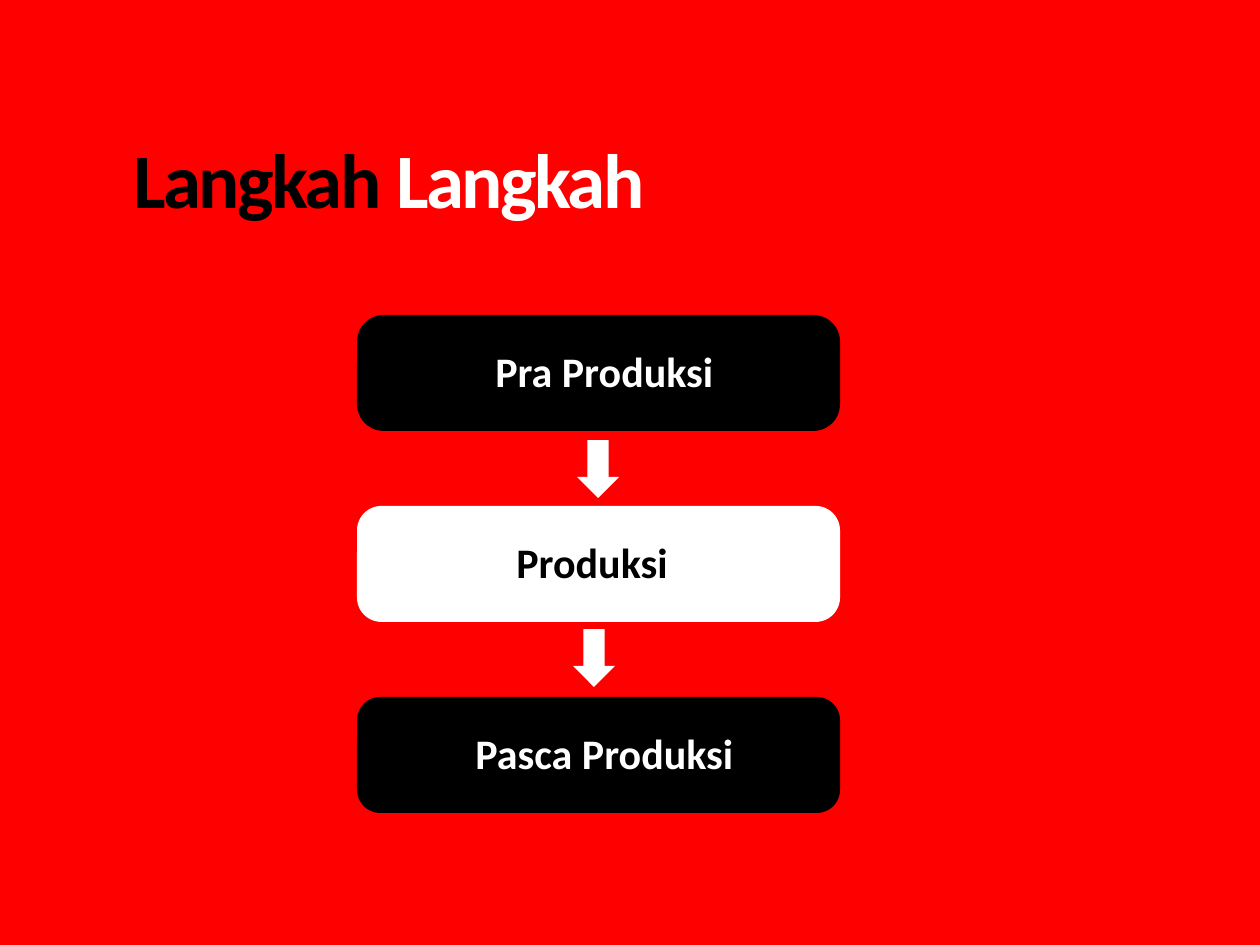
import pptx
import pptx.util
import pptx.dml.color
import pptx.enum.shapes
import pptx.enum.text

RGBColor = pptx.dml.color.RGBColor
RED = RGBColor(0xFF, 0x00, 0x00)
BLACK = RGBColor(0x00, 0x00, 0x00)
WHITE = RGBColor(0xFF, 0xFF, 0xFF)
SHAPE = pptx.enum.shapes.MSO_SHAPE
PX_PER_INCH = 126
STEP_PITCH = 191
TITLE_FONT = {"name": "Calibri", "size": pptx.util.Pt(44), "bold": True}
STEP_FONT = {"name": "Calibri", "size": pptx.util.Pt(24), "bold": True}


def px(*lengths):
    return [pptx.util.Emu(round(n * 914400 / PX_PER_INCH)) for n in lengths]


def set_attrs(obj, values):
    for name, value in values.items():
        setattr(obj, name, value)


def add_filled(s, kind, box, color):
    sp = s.shapes.add_shape(kind, *px(*box))
    sp.shadow.inherit = False
    sp.fill.solid()
    sp.fill.fore_color.rgb = color
    sp.line.fill.background()
    return sp


def add_text(s, box, runs, font, frame):
    tf = s.shapes.add_textbox(*px(*box)).text_frame
    set_attrs(tf, {"word_wrap": True, **frame})
    p = tf.paragraphs[0]
    for text, color in runs:
        r = p.add_run()
        r.text = text
        set_attrs(r.font, font)
        r.font.color.rgb = color
    return p


def add_title(s, box):
    p = add_text(s, box, [("Langkah ", BLACK), ("Langkah", WHITE)], TITLE_FONT,
                 {"vertical_anchor": pptx.enum.text.MSO_ANCHOR.TOP,
                  "margin_top": px(59)[0]})
    for r in p.runs:
        r.font._element.set("spc", "-150")


def add_step(s, box, text, indent, fill, color, radius):
    x, y, w, h = box
    sp = add_filled(s, SHAPE.ROUNDED_RECTANGLE, box, fill)
    sp.adjustments[0] = radius
    add_text(s, (x + indent, y + 24, 410, 63), [(text, color)], STEP_FONT, {})


def add_flow(s, box):
    x, y, w, h = box
    steps = [
        ("Pra Produksi", 126, BLACK, WHITE, 0.23),
        ("Produksi", 147, WHITE, BLACK, 0.21),
        ("Pasca Produksi", 106, BLACK, WHITE, 0.2),
    ]
    for i, step in enumerate(steps):
        add_step(s, (x, y + i * STEP_PITCH, w, 116), *step)
    for dx, dy in [(220, 125), (216, 314)]:
        add_filled(s, SHAPE.DOWN_ARROW, (x + dx, y + dy, 42, 58), WHITE)


def main():
    prs = pptx.Presentation()
    set_attrs(prs, {"slide_width": pptx.util.Inches(10),
                    "slide_height": pptx.util.Inches(7.5)})
    s = prs.slides.add_slide(prs.slide_layouts[6])
    add_filled(s, SHAPE.RECTANGLE, (0, 0, 1260, 945), RED)
    add_title(s, (121, 73, 1018, 368))
    add_flow(s, (357, 315, 483, 498))
    prs.save("out.pptx")


if __name__ == "__main__":
    main()
